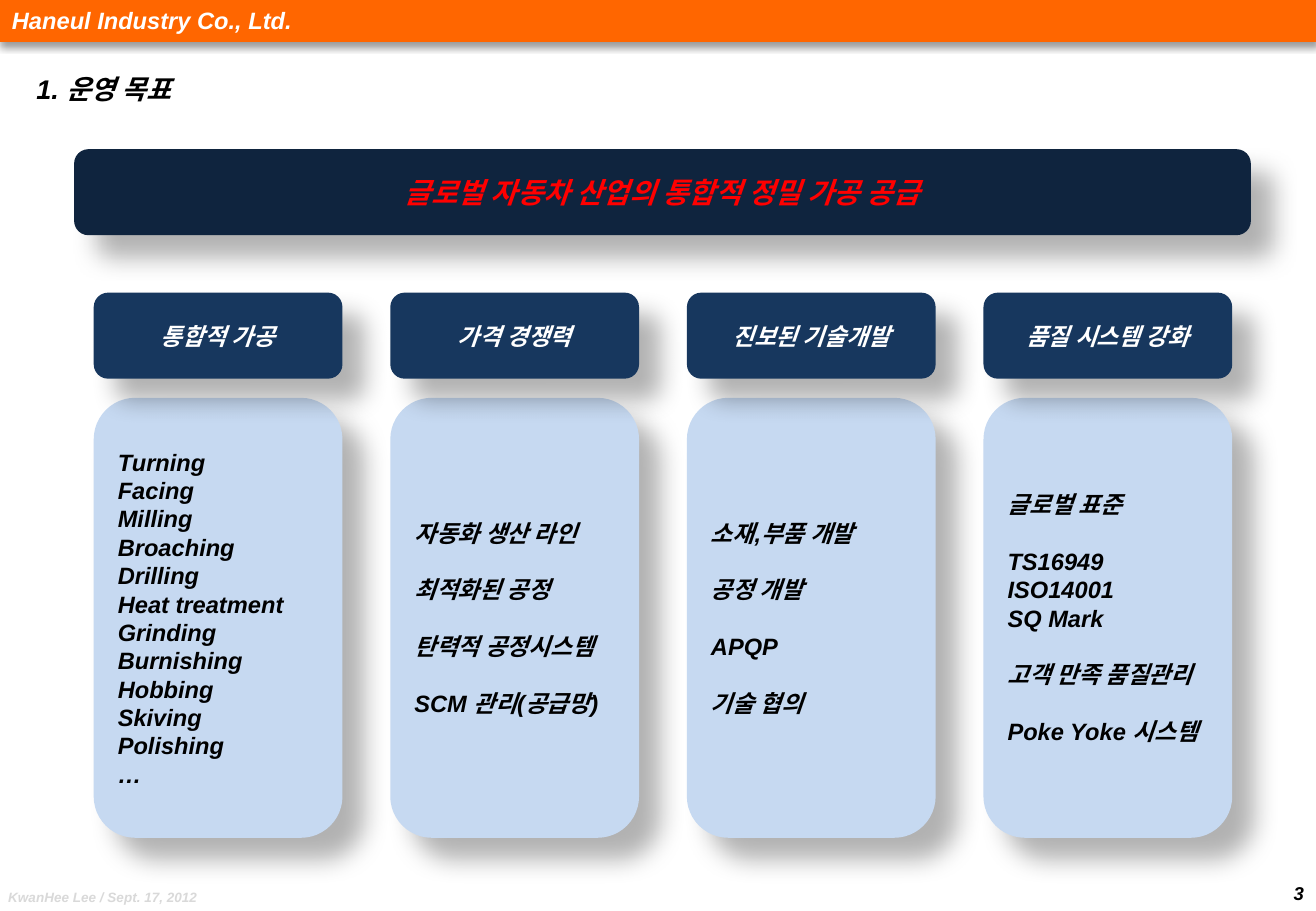
import pptx
import pptx.util
import pptx.dml.color
import pptx.enum.shapes
import pptx.enum.text
import pptx.oxml
from collections import namedtuple
from dataclasses import dataclass

Cm, Pt = pptx.util.Cm, pptx.util.Pt
Kind = pptx.enum.shapes.MSO_SHAPE
Align = pptx.enum.text.PP_ALIGN
Anchor = pptx.enum.text.MSO_ANCHOR
Box = namedtuple("Box", "x y w h")


@dataclass(frozen=True)
class Theme:
    font: str = "Arial"
    orange: str = "FF6600"
    night: str = "0F243E"
    navy: str = "17375E"
    sky: str = "C6D9F1"
    white: str = "FFFFFF"
    black: str = "000000"
    red: str = "FF0000"
    grey: str = "D9D9D9"
    goal: float = 17
    title: float = 16
    body: float = 14
    page: float = 11
    note: float = 8
    gap: float = 16.8


theme = Theme()

COLUMNS = [
    ("통합적 가공", [["Turning", "Facing", "Milling", "Broaching", "Drilling",
                 "Heat treatment", "Grinding", "Burnishing", "Hobbing",
                 "Skiving", "Polishing", "…"]]),
    ("가격 경쟁력", [["자동화 생산 라인"], ["최적화된 공정"],
                 ["탄력적 공정시스템"], ["SCM 관리(공급망)"]]),
    ("진보된 기술개발", [["소재,부품 개발"], ["공정 개발"], ["APQP"], ["기술 협의"]]),
    ("품질 시스템 강화", [["글로벌 표준"], ["TS16949", "ISO14001", "SQ Mark"],
                   ["고객 만족 품질관리"], ["Poke Yoke 시스템"]]),
]


def rgb(code):
    return pptx.dml.color.RGBColor.from_string(code)


def place(box):
    return [Cm(v) for v in box]


def write(shape, groups, size, color, align=Align.LEFT, inset=(0.25, 0.13), wrap=False):
    """Fill a shape with groups of lines, one line's gap between groups."""
    frame = shape.text_frame
    frame.word_wrap = wrap
    frame.vertical_anchor = Anchor.MIDDLE
    frame.margin_left = frame.margin_right = Cm(inset[0])
    frame.margin_top = frame.margin_bottom = Cm(inset[1])
    para = None
    for group in groups:
        for i, line in enumerate(group):
            first = para is None
            para = frame.paragraphs[0] if first else frame.add_paragraph()
            para.alignment = align
            if i == 0 and not first:
                para.space_before = Pt(theme.gap)
            run = para.add_run()
            run.text = line
            font = run.font
            font.name, font.size = theme.font, Pt(size)
            font.bold = font.italic = True
            font.color.rgb = rgb(color)


def shade(shape, alpha, blur, dist, angle):
    """Give a shape an outer shadow; blur and distance are in points."""
    shape.shadow.inherit = False
    props = shape._element.spPr
    old = props.find(pptx.oxml.ns.qn("a:effectLst"))
    new = pptx.oxml.parse_xml(
        f'<a:effectLst {pptx.oxml.ns.nsdecls("a")}>'
        f'<a:outerShdw blurRad="{Pt(blur)}" dist="{Pt(dist)}" dir="{angle * 60000}" '
        f'algn="tl" rotWithShape="0"><a:srgbClr val="{theme.black}">'
        f'<a:alpha val="{alpha * 1000}"/></a:srgbClr></a:outerShdw></a:effectLst>')
    props.replace(old, new)


def block(slide, kind, box, fill):
    shape = slide.shapes.add_shape(kind, *place(box))
    shape.fill.solid()
    shape.fill.fore_color.rgb = rgb(fill)
    shape.line.fill.background()
    return shape


def card(slide, box, fill, groups, size, color, align=Align.CENTER, inset=(0.25, 0.13)):
    shape = block(slide, Kind.ROUNDED_RECTANGLE, box, fill)
    shade(shape, 30, 15, 18, 45)
    write(shape, groups, size, color, align, inset)


def label(slide, box, text, size, color, align=Align.LEFT, inset=(0, 0), wrap=False):
    shape = slide.shapes.add_textbox(*place(box))
    write(shape, [[text]], size, color, align, inset, wrap)


def header(slide, box):
    bar = block(slide, Kind.RECTANGLE, box, theme.orange)
    bar.line.color.rgb = rgb(theme.orange)
    bar.line.width = Pt(0.75)
    shade(bar, 40, 4, 3, 90)
    write(bar, [["Haneul Industry Co., Ltd."]], theme.body, theme.white, wrap=True)


def footer(slide, box):
    label(slide, Box(box.x - 0.05, box.y + 0.28, 4.4, 0.33),
          "KwanHee Lee / Sept. 17, 2012", theme.note, theme.grey, Align.CENTER)
    label(slide, Box(box.x + box.w - 1.75, box.y, 1.75, box.h), "3",
          theme.page, theme.black, Align.RIGHT, (0.25, 0.13), True)


def pillars(slide, box, wide=5.2, head=1.8, gap=0.4):
    """Spread the columns evenly over the box, each a head above a list."""
    step = (box.w - wide) / (len(COLUMNS) - 1)
    drop = head + gap
    for i, (name, groups) in enumerate(COLUMNS):
        x = box.x + i * step
        card(slide, Box(x, box.y + drop, wide, box.h - drop), theme.sky,
             groups, theme.body, theme.black, Align.LEFT)
        card(slide, Box(x, box.y, wide, head), theme.navy,
             [[name]], theme.body, theme.white, inset=(0.2, 0.1))


def main():
    deck = pptx.Presentation()
    deck.slide_width, deck.slide_height = Cm(27.51), Cm(19.05)
    slide = deck.slides.add_slide(deck.slide_layouts[6])
    header(slide, Box(0, -0.02, 27.51, 0.89))
    label(slide, Box(0.76, 1.52, 3.07, 0.69), "1. 운영 목표", theme.title, theme.black)
    card(slide, Box(1.55, 3.12, 24.6, 1.8), theme.night,
         [["글로벌 자동차 산업의 통합적 정밀 가공 공급"]], theme.goal, theme.red)
    pillars(slide, Box(1.96, 6.12, 23.8, 11.4))
    footer(slide, Box(0, 18.31, 27.51, 0.74))
    deck.save("out.pptx")


if __name__ == "__main__":
    main()
